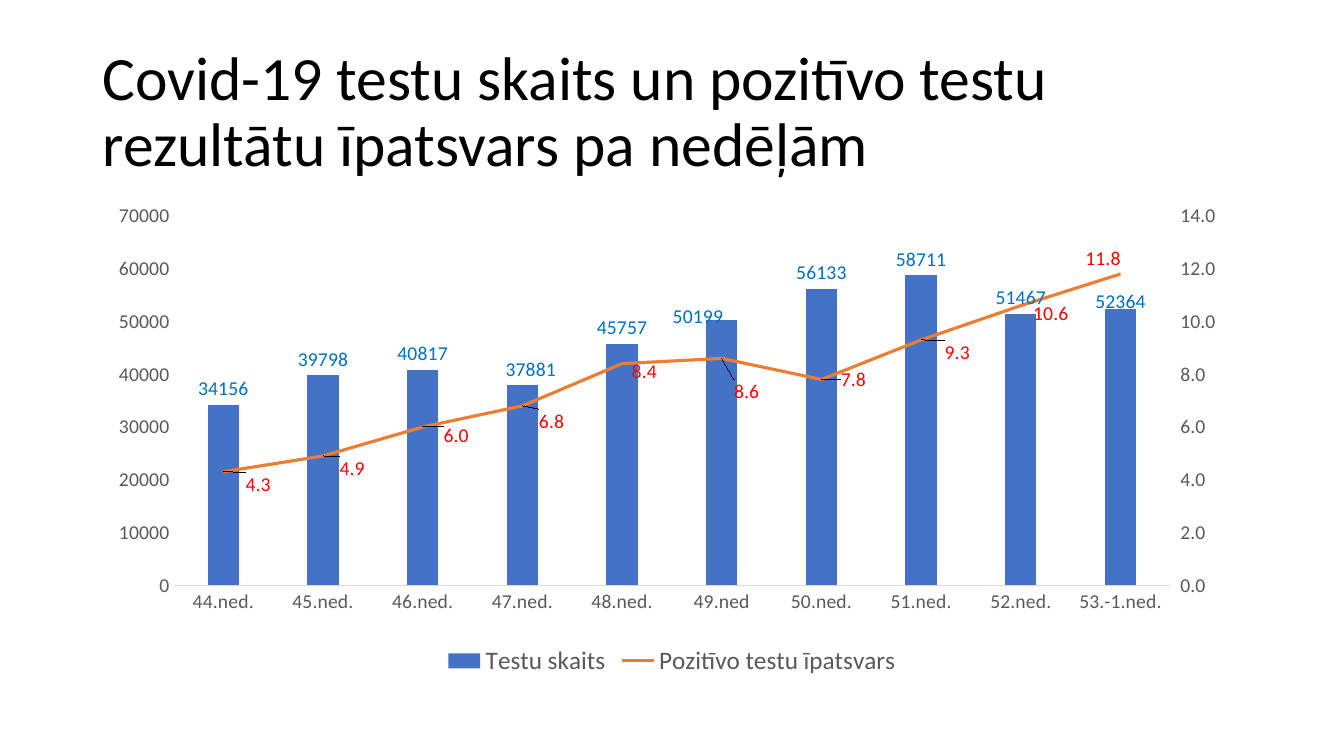
import copy

import pptx
import pptx.chart.axis
import pptx.chart.data
import pptx.dml.color
import pptx.enum.chart
import pptx.enum.text
import pptx.oxml
import pptx.oxml.ns
import pptx.util

Pt = pptx.util.Pt
qn = pptx.oxml.ns.qn
FONT = "Calibri"
COLORS = {
    "title": "000000",
    "axis_text": "595959",
    "axis_line": "D9D9D9",
    "tests": "4472C4",
    "tests_label": "0070C0",
    "share": "ED7D31",
    "share_label": "FF0000",
}
WEEKS = ["44.ned.", "45.ned.", "46.ned.", "47.ned.", "48.ned.",
         "49.ned", "50.ned.", "51.ned.", "52.ned.", "53.-1.ned."]
TESTS = [34156, 39798, 40817, 37881, 45757, 50199, 56133, 58711, 51467, 52364]
SHARES = [4.3, 4.9, 6, 6.8, 8.4, 8.6, 7.8, 9.3, 10.6, 11.8]
TESTS_LABEL_SHIFTS = {3: (6, 0), 5: (-17, 9), 9: (0, 6)}
SHARE_LABEL_SHIFTS = dict(enumerate([
    (13, 9), (9, 9), (12, 6), (9, 11), (4, 6),
    (6, 24), (11, 0), (14, 9), (6, 6), (-28, -11)]))
PLOT_BOX = {"x": 0.07, "y": 0.03, "w": 0.86, "h": 0.77}


def color(name):
    return pptx.dml.color.RGBColor.from_string(COLORS[name])


def set_font(font, size, color_name):
    font.name = FONT
    font.size = Pt(size)
    font.bold = False
    font.color.rgb = color(color_name)


def manual_layout(values, inner=False):
    target = '<c:layoutTarget val="inner"/><c:xMode val="edge"/><c:yMode val="edge"/>' if inner else ""
    items = "".join(f'<c:{key} val="{value}"/>' for key, value in values.items())
    return pptx.oxml.parse_xml(
        f'<c:layout {pptx.oxml.ns.nsdecls("c")}><c:manualLayout>'
        f"{target}{items}</c:manualLayout></c:layout>")


def add_title(slide, left, top, width, height):
    title = slide.shapes.title
    title.left, title.top, title.width, title.height = map(Pt, (left, top, width, height))
    frame = title.text_frame
    frame.text = "Covid-19 testu skaits un pozitīvo testu rezultātu īpatsvars pa nedēļām"
    frame.word_wrap = True
    frame.auto_size = pptx.enum.text.MSO_AUTO_SIZE.NONE
    frame.vertical_anchor = pptx.enum.text.MSO_ANCHOR.MIDDLE
    paragraph = frame.paragraphs[0]
    paragraph.alignment = pptx.enum.text.PP_ALIGN.LEFT
    paragraph.line_spacing = 0.9
    set_font(paragraph.font, 44, "title")


def style_axes(chart):
    category_axis, value_axis = chart.category_axis, chart.value_axis
    for axis in (category_axis, value_axis):
        axis.has_major_gridlines = False
        axis.major_tick_mark = pptx.enum.chart.XL_TICK_MARK.NONE
        axis.minor_tick_mark = pptx.enum.chart.XL_TICK_MARK.NONE
        set_font(axis.tick_labels.font, 14, "axis_text")
    category_axis.format.line.color.rgb = color("axis_line")
    category_axis.format.line.width = Pt(0.75)
    value_axis.format.line.fill.background()
    value_axis.minimum_scale = 0
    value_axis.maximum_scale = 70000
    value_axis.major_unit = 10000
    value_axis.tick_labels.number_format = "0"
    value_axis.tick_labels.number_format_is_linked = False


def move_share_to_line(chart):
    plot_area = chart.element.find(".//" + qn("c:plotArea"))
    bar_chart = plot_area.find(qn("c:barChart"))
    share = bar_chart.findall(qn("c:ser"))[1]
    for invert in share.findall(qn("c:invertIfNegative")):
        share.remove(invert)
    line_chart = pptx.oxml.parse_xml(
        f'<c:lineChart {pptx.oxml.ns.nsdecls("c")}><c:grouping val="standard"/>'
        '<c:varyColors val="0"/><c:marker val="1"/>'
        '<c:axId val="5001"/><c:axId val="5002"/></c:lineChart>')
    line_chart.insert(2, share)
    bar_chart.addnext(line_chart)

    primary_value = plot_area.find(qn("c:valAx"))
    right = copy.deepcopy(primary_value)
    hidden = copy.deepcopy(plot_area.find(qn("c:catAx")))
    primary_value.addnext(right)
    right.addnext(hidden)
    for element, own, other in ((right, "5002", "5001"), (hidden, "5001", "5002")):
        element.find(qn("c:axId")).set("val", own)
        element.find(qn("c:crossAx")).set("val", other)
    right.find(qn("c:axPos")).set("val", "r")
    right.find(qn("c:crosses")).set("val", "max")
    pptx.chart.axis.CategoryAxis(hidden).visible = False
    right_axis = pptx.chart.axis.ValueAxis(right)
    right_axis.maximum_scale = 14
    right_axis.major_unit = 2
    right_axis.major_tick_mark = pptx.enum.chart.XL_TICK_MARK.OUTSIDE
    right_axis.tick_labels.number_format = "0.0"

    for layout in plot_area.findall(qn("c:layout")):
        plot_area.remove(layout)
    plot_area.insert(0, manual_layout(PLOT_BOX, inner=True))


def label_series(series, color_name, number_format, position, shifts, width, height):
    labels = series.data_labels
    labels.show_value = True
    labels.number_format = number_format
    labels.number_format_is_linked = False
    labels.position = position
    set_font(labels.font, 14, color_name)
    for index in shifts:
        label = series.points[index].data_label
        label.position = position
        set_font(label.font, 14, color_name)
    for element in labels._element.findall(qn("c:dLbl")):
        marker = element.find(qn("c:idx"))
        right, down = shifts[int(marker.get("val"))]
        marker.addnext(manual_layout({"x": right / width, "y": down / height}))


def add_tests_chart(slide, left, top, width, height):
    data = pptx.chart.data.CategoryChartData()
    data.categories = WEEKS
    data.add_series("Testu skaits", TESTS, "0")
    data.add_series("Pozitīvo testu īpatsvars", SHARES, "0.0")
    chart = slide.shapes.add_chart(
        pptx.enum.chart.XL_CHART_TYPE.COLUMN_CLUSTERED,
        Pt(left), Pt(top), Pt(width), Pt(height), data).chart
    chart.has_title = False
    chart.font.name = FONT
    chart.font.size = Pt(10)
    chart.has_legend = True
    chart.legend.position = pptx.enum.chart.XL_LEGEND_POSITION.BOTTOM
    chart.legend.include_in_layout = False
    set_font(chart.legend.font, 18, "axis_text")

    style_axes(chart)
    move_share_to_line(chart)
    columns, line = chart.plots
    columns.gap_width = 219
    columns.overlap = -27
    columns.vary_by_categories = False

    tests, share = columns.series[0], line.series[0]
    tests.format.fill.solid()
    tests.format.fill.fore_color.rgb = color("tests")
    share.smooth = False
    share.marker.style = pptx.enum.chart.XL_MARKER_STYLE.NONE
    share.format.line.color.rgb = color("share")
    share.format.line.width = Pt(2.25)
    positions = pptx.enum.chart.XL_LABEL_POSITION
    label_series(tests, "tests_label", "0", positions.OUTSIDE_END,
                 TESTS_LABEL_SHIFTS, width, height)
    label_series(share, "share_label", "0.0", positions.RIGHT,
                 SHARE_LABEL_SHIFTS, width, height)


def main():
    presentation = pptx.Presentation()
    presentation.slide_width = Pt(960)
    presentation.slide_height = Pt(540)
    slide = presentation.slides.add_slide(presentation.slide_layouts[5])
    add_title(slide, 66, 28.75, 828, 104.4)
    add_tests_chart(slide, 66, 144, 828, 342.6)
    presentation.save("out.pptx")


if __name__ == "__main__":
    main()
